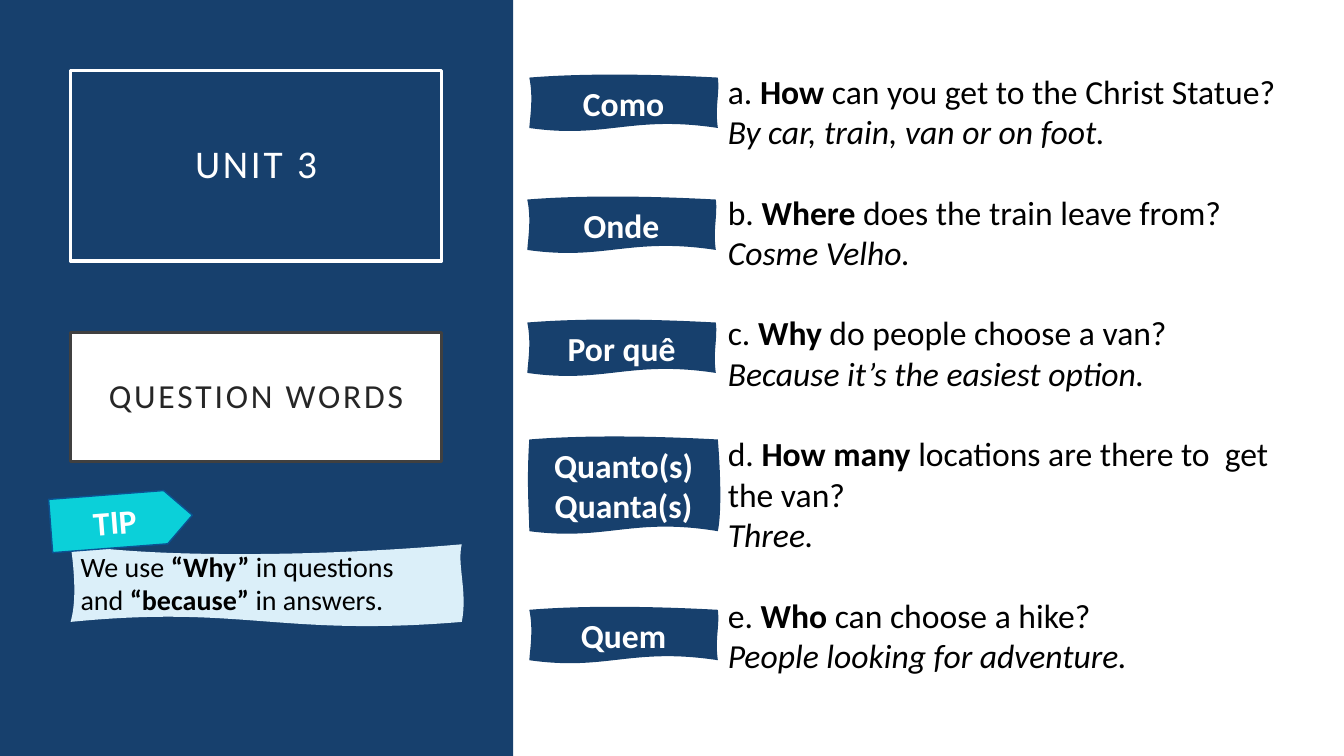
from lxml.etree import SubElement
from pptx import Presentation
from pptx.dml.color import RGBColor
from pptx.enum.shapes import MSO_SHAPE as Shape
from pptx.enum.text import MSO_ANCHOR as Anchor, MSO_AUTO_SIZE as AutoSize, PP_ALIGN as Align
from pptx.oxml.ns import qn
from pptx.util import Inches, Pt

# Content
UNIT = "UNIT 3"
TOPIC = "QUESTION WORDS"
TIP_LABEL = "TIP"
TIP_LINES = [
    ("We use ", "“Why” ", "in questions"),
    ("and ", "“because” ", "in answers."),
]
QUESTIONS = [
    ("a. ", "How", " can you get to the Christ Statue?", "By car, train, van or on foot."),
    ("b. ", "Where", " does the train leave from?", "Cosme Velho."),
    ("c. ", "Why", " do people choose a van?", "Because it’s the easiest option."),
    ("d. ", "How many", " locations are there to  get the van?", "Three."),
    ("e. ", "Who", " can choose a hike?", "People looking for adventure."),
]
# Translations: lines, left, top
TRANSLATIONS = [
    (["Como"], 5.25, 0.77),
    (["Onde"], 5.23, 1.98),
    (["Por quê"], 5.23, 3.2),
    (["Quanto(s)", "Quanta(s)"], 5.25, 4.36),
    (["Quem"], 5.25, 6.05),
]
COLORS = {"navy": "17406D", "white": "FFFFFF", "black": "000000", "ink": "262626",
          "frame": "404040", "pale": "DBEFF9", "cyan": "0BD0D9", "edge": "0B5292"}

# Wavy banner outlines: cubic curves clockwise from the top left corner, in inches
SMALL_WAVE = [
    [(0.48, -0.04), (1.14, -0.04), (1.87, 0)],
    [(1.89, 0.16), (1.84, 0.29), (1.87, 0.5)],
    [(1.01, 0.37), (0.77, 0.61), (0, 0.5)],
    [(0.01, 0.37), (0.04, 0.19), (0, 0)],
]
TALL_WAVE = [
    [(0.48, -0.04), (1.14, -0.04), (1.87, 0)],
    [(1.88, 0.12), (1.92, 0.66), (1.87, 0.91)],
    [(1.02, 0.77), (0.77, 1.01), (0, 0.91)],
    [(0, 0.76), (-0.03, 0.43), (0, 0)],
]
TIP_WAVE = [
    [(0.77, 0.13), (2.4, 0.13), (3.88, 0)],
    [(3.83, 0.2), (3.94, 0.47), (3.88, 0.77)],
    [(2.06, 0.92), (1.71, 0.6), (0, 0.77)],
    [(0.05, 0.6), (0.05, 0.35), (0, 0)],
]
QUESTION_GAP = Pt(28.8)


def rgb(name):
    return RGBColor.from_string(COLORS[name])


def paint(shape, fill=None, line=None, width=1):
    if fill:
        shape.fill.solid()
        shape.fill.fore_color.rgb = rgb(fill)
    else:
        shape.fill.background()
    if line:
        shape.line.color.rgb = rgb(line)
        shape.line.width = Pt(width)
    else:
        shape.line.fill.background()


def add_run(paragraph, text, size, color, spacing=None, **styles):
    run = paragraph.add_run()
    run.text = text
    formats = {"name": "Calibri", "size": Pt(size), "bold": False, "italic": False, **styles}
    for key, value in formats.items():
        setattr(run.font, key, value)
    run.font.color.rgb = rgb(color)
    if spacing:
        run._r.get_or_add_rPr().set("spc", str(spacing * 100))


def set_frame(frame, **formats):
    defaults = {"word_wrap": True, "auto_size": AutoSize.NONE, "vertical_anchor": Anchor.TOP}
    for key, value in {**defaults, **formats}.items():
        setattr(frame, key, value)


def add_paragraph(frame, index, align=Align.LEFT):
    paragraph = frame.add_paragraph() if index else frame.paragraphs[0]
    paragraph.alignment = align
    return paragraph


def add_emphasis(paragraph, parts, size):
    for part, bold in zip(parts, (False, True, False)):
        add_run(paragraph, part, size, "black", bold=bold)


def fill_heading(shape, text, size, color):
    margins = ("margin_left", "margin_top", "margin_right", "margin_bottom")
    set_frame(shape.text_frame, vertical_anchor=Anchor.MIDDLE,
              **dict.fromkeys(margins, Inches(0.2)))
    paragraph = add_paragraph(shape.text_frame, 0, Align.CENTER)
    paragraph.line_spacing = 0.9
    add_run(paragraph, text, size, color, spacing=2)


def add_shape(shapes, kind, box, **colors):
    shape = shapes.add_shape(kind, *map(Inches, box))
    shape.shadow.inherit = False
    paint(shape, **colors)
    return shape


def add_banner(shapes, wave, left, top, fill):
    corners = [(Inches(left + x), Inches(top + y)) for *_, (x, y) in wave]
    builder = shapes.build_freeform(*corners[-1], scale=1.0)
    builder.add_line_segments(corners, close=True)
    banner = builder.convert_to_shape()
    # Bend each straight side into its curve
    sides = list(banner._element.iter(qn("a:lnTo")))
    for side, curve in zip(sides, wave):
        side.tag = qn("a:cubicBezTo")
        side.remove(side[0])
        for x, y in curve:
            SubElement(side, qn("a:pt"), x=str(Inches(x)), y=str(Inches(y)))
    banner.shadow.inherit = False
    paint(banner, fill)
    set_frame(banner.text_frame, auto_size=AutoSize.SHAPE_TO_FIT_TEXT)
    return banner


def main():
    deck = Presentation()
    deck.slide_width, deck.slide_height = Inches(13.33), Inches(7.5)
    slide = deck.slides.add_slide(deck.slide_layouts[5])
    shapes = slide.shapes

    # Side panel, behind the title
    panel = add_shape(shapes, Shape.RECTANGLE, (0, 0, 5.09, 7.5), fill="navy")
    shapes._spTree.insert(2, panel._element)

    # Headings
    title = shapes.title
    title.left, title.top, title.width, title.height = map(Inches, (0.7, 0.7, 3.68, 1.89))
    paint(title, line="white", width=2.5)
    fill_heading(title, UNIT, 28, "white")
    topic = add_shape(shapes, Shape.RECTANGLE, (0.7, 3.3, 3.68, 1.28),
                      fill="white", line="frame", width=2.5)
    fill_heading(topic, TOPIC, 24, "ink")

    # Tip
    tip = shapes.add_group_shape().shapes
    note = add_banner(tip, TIP_WAVE, 0.7, 5.4, "pale").text_frame
    for index, parts in enumerate(TIP_LINES):
        add_emphasis(add_paragraph(note, index), parts, 20)
    tag = add_shape(tip, Shape.PENTAGON, (0.5, 4.9, 1.41, 0.53), fill="cyan", line="edge")
    tag.rotation = 355.6
    set_frame(tag.text_frame, vertical_anchor=Anchor.MIDDLE)
    add_run(add_paragraph(tag.text_frame, 0, Align.CENTER), TIP_LABEL, 24, "white", bold=True)

    # Questions and answers
    dialogue = shapes.add_textbox(*map(Inches, (7.12, 0.65, 5.78, 6.56))).text_frame
    set_frame(dialogue, auto_size=AutoSize.SHAPE_TO_FIT_TEXT)
    for index, (*question, answer) in enumerate(QUESTIONS):
        paragraph = add_paragraph(dialogue, index)
        if index:
            paragraph.space_before = QUESTION_GAP
        add_emphasis(paragraph, question, 24)
        add_run(dialogue.add_paragraph(), answer, 24, "black", italic=True)

    # Translations
    for lines, left, top in TRANSLATIONS:
        wave = TALL_WAVE if len(lines) > 1 else SMALL_WAVE
        label = add_banner(shapes, wave, left, top, "navy").text_frame
        for index, line in enumerate(lines):
            add_run(add_paragraph(label, index, Align.CENTER), line, 24, "white", bold=True)

    deck.save("out.pptx")


if __name__ == "__main__":
    main()
